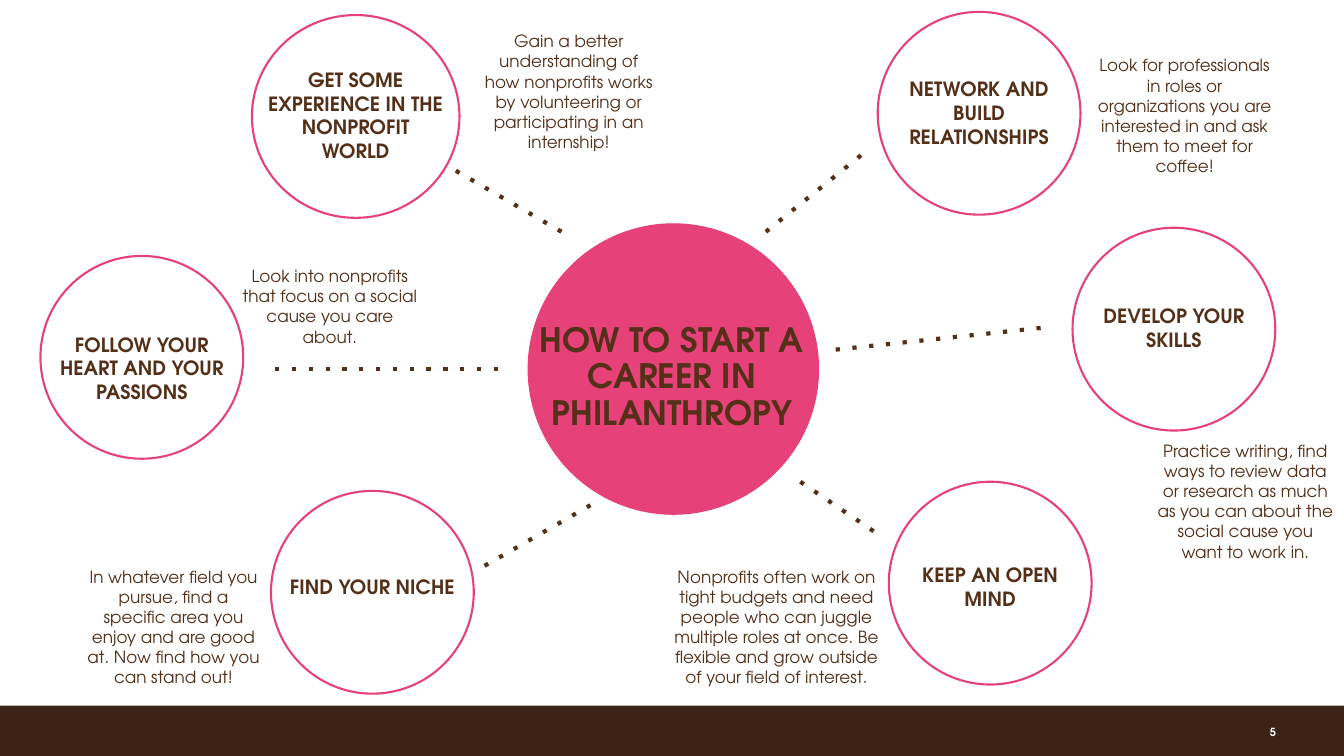
from lxml.etree import SubElement
from pptx import Presentation
from pptx.dml.color import RGBColor as RGB
from pptx.enum.shapes import MSO_CONNECTOR as Link, MSO_SHAPE as Kind
from pptx.enum.text import MSO_ANCHOR as Anchor, MSO_AUTO_SIZE as Auto, PP_ALIGN as Align
from pptx.oxml.ns import qn
from pptx.util import Cm, Pt

FONT = "TeX Gyre Adventor"
HUES = {"pink": "E74179", "text": "543019", "bar": "3C2415", "white": "FFFFFF"}
WIDE, HIGH = 33.87, 19.05
RING, LABEL = 5.11, 4.95

TITLE = "HOW TO START A CAREER IN PHILANTHROPY"
PAGE = "5"

# Each step: ring (left, top, width), label (text, top, lines),
# note (text, left, top, width, lines), dots (from x, y, to x, y)
STEPS = [
    {"ring": (6.35, 0.38, 5.23),
     "label": ("GET SOME EXPERIENCE IN THE NONPROFIT WORLD", 1.47, 4),
     "note": ("Gain a better understanding of how nonprofits works by "
              "volunteering or participating in an internship!",
              11.86, 0.53, 4.95, 6),
     "dots": (14.15, 5.84, 11.43, 4.27)},
    {"ring": (22.12, 0.3, RING),
     "label": ("NETWORK AND BUILD RELATIONSHIPS", 1.7, 3),
     "note": ("Look for professionals in roles or organizations you are "
              "interested in and ask them to meet for coffee!",
              27.3, 1.14, 5.11, 6),
     "dots": (19.3, 5.84, 21.79, 3.84)},
    {"ring": (27.03, 5.74, RING),
     "label": ("DEVELOP YOUR SKILLS", 7.42, 2),
     "note": ("Practice writing, find ways to review data or research as much "
              "as you can about the social cause you want to work in.",
              28.91, 10.85, 4.95, 6),
     "dots": (21.06, 8.81, 26.26, 8.26)},
    {"ring": (22.4, 12.14, RING),
     "label": ("KEEP AN OPEN MIND", 13.94, 2),
     "note": ("Nonprofits often work on tight budgets and need people who can "
              "juggle multiple roles at once. Be flexible and grow outside of "
              "your field of interest.",
              16.71, 14.02, 5.72, 6),
     "dots": (20.17, 12.14, 22.2, 13.51)},
    {"ring": (6.83, 12.37, RING),
     "label": ("FIND YOUR NICHE", 14.25, 1),
     "note": ("In whatever field you pursue, find a specific area you enjoy "
              "and are good at. Now find how you can stand out!",
              1.9, 14.02, 4.95, 6),
     "dots": (14.88, 12.73, 12.19, 14.27)},
    {"ring": (1.02, 6.45, RING),
     "label": ("FOLLOW YOUR HEART AND YOUR PASSIONS", 8.13, 3),
     "note": ("Look into nonprofits that focus on a social cause you care "
              "about.", 5.84, 6.45, 4.95, 4),
     "dots": (12.55, 9.3, 6.83, 9.3)},
]

deck = Presentation()
deck.slide_width, deck.slide_height = Cm(WIDE), Cm(HIGH)
slide = deck.slides.add_slide(deck.slide_layouts[6])
shapes = slide.shapes


def hue(name):
    return RGB.from_string(HUES[name])


def draw(kind, box, fill, line=None, width=0.75):
    shape = shapes.add_shape(kind, *map(Cm, box))
    shape.shadow.inherit = False
    shape.fill.solid()
    shape.fill.fore_color.rgb = hue(fill)
    if line:
        shape.line.color.rgb = hue(line)
        shape.line.width = Pt(width)
    else:
        shape.line.fill.background()


def write(text, box, size=12, bold=False, color="text", align=Align.CENTER,
          anchor=Anchor.TOP, inset=0.25, auto=Auto.SHAPE_TO_FIT_TEXT, space=1.0):
    frame = shapes.add_textbox(*map(Cm, box)).text_frame
    frame.word_wrap = True
    frame.auto_size = auto
    frame.vertical_anchor = anchor
    frame.margin_left = frame.margin_right = Cm(inset)
    frame.margin_top = frame.margin_bottom = Cm(inset)
    para = frame.paragraphs[0]
    para.alignment = align
    para.line_spacing = space
    run = para.add_run()
    run.text = text
    run.font.name = FONT
    run.font.size = Pt(size)
    run.font.bold = bold
    run.font.color.rgb = hue(color)


def dot(ends):
    link = shapes.add_connector(Link.STRAIGHT, *map(Cm, ends))
    link.line.color.rgb = hue("text")
    link.line.width = Pt(3)
    props = link._element.spPr
    SubElement(props.find(qn("a:ln")), qn("a:prstDash")).set("val", "dot")
    SubElement(props, qn("a:effectLst"))


# Footer bar and page number
draw(Kind.RECTANGLE, (0, 17.78, WIDE, 1.27), "bar")
write(PAGE, (31.09, 17.93, 1.07, 1.02), size=8, bold=True, color="white",
      align=Align.RIGHT, anchor=Anchor.MIDDLE, inset=0, auto=Auto.NONE)

# Central circle with the title
draw(Kind.OVAL, (13.31, 5.64, 7.32, 7.32), "pink", "pink")
write(TITLE, (13.36, 7.9, 7.14, 3.25), size=24, bold=True,
      anchor=Anchor.MIDDLE, inset=0, auto=Auto.NONE, space=0.9)

# Steps around it
for step in STEPS:
    dot(step["dots"])
    left, top, width = step["ring"]
    draw(Kind.OVAL, (left, top, width, RING), "white", "pink", 1.5)

    text, top, rows = step["label"]
    start = left + (width - LABEL) / 2
    write(text, (start, top, LABEL, 0.52 + 0.6 * rows), size=14, bold=True)

    text, left, top, width, rows = step["note"]
    write(text, (left, top, width, 0.52 + 0.51 * rows))

deck.save("out.pptx")
